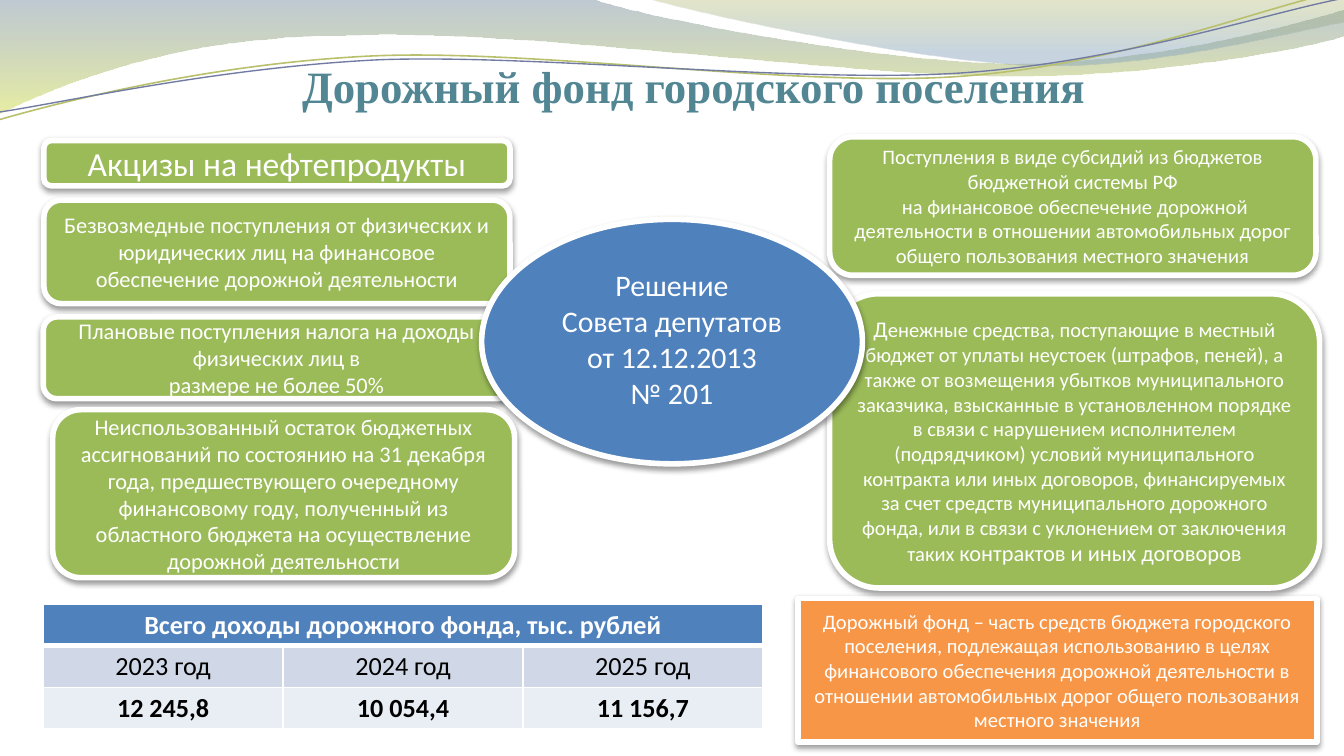
"""Builds the slide about the income sources of the town road fund."""
from math import cos, radians, sin

from lxml import etree
from pptx import Presentation
from pptx.dml.color import RGBColor
from pptx.enum.shapes import MSO_SHAPE
from pptx.enum.text import MSO_ANCHOR, PP_ALIGN
from pptx.oxml import parse_xml
from pptx.oxml.ns import nsdecls, qn
from pptx.util import Pt

CENTER, MIDDLE = PP_ALIGN.CENTER, MSO_ANCHOR.MIDDLE
RECTANGLE, ROUNDED, OVAL = MSO_SHAPE.RECTANGLE, MSO_SHAPE.ROUNDED_RECTANGLE, MSO_SHAPE.OVAL
WHITE = RGBColor(0xFF, 0xFF, 0xFF)
BLACK = RGBColor(0, 0, 0)
TEAL = RGBColor(0x52, 0x86, 0x93)
GREEN = RGBColor(0x9B, 0xBB, 0x59)
BLUE = RGBColor(0x4F, 0x81, 0xBD)
ORANGE = RGBColor(0xF7, 0x96, 0x46)
BLUE_TINT = RGBColor(0xD0, 0xD8, 0xE8)
PALE_TINT = RGBColor(0xE9, 0xED, 0xF4)
SLATE = RGBColor(0x72, 0x88, 0x9B)
LIME = RGBColor(0xD3, 0xDE, 0x57)
OLIVE = RGBColor(0xA4, 0xAC, 0x50)
SKY = RGBColor(0x84, 0xA3, 0xBD)
OLIVE_LINE = RGBColor(0xB9, 0xC0, 0x6C)
VIOLET_LINE = RGBColor(0x72, 0x7C, 0xA3)


def write(frame, paragraphs, sizes, color=WHITE, font="Calibri", bold=False):
    frame.word_wrap = True
    for index, pieces in enumerate(paragraphs):
        para = frame.paragraphs[0] if index == 0 else frame.add_paragraph()
        para.alignment = CENTER
        for piece, size in zip(pieces, sizes):
            for number, line in enumerate(piece.split("\n")):
                if number:
                    para.add_line_break()
                span = para.add_run()
                span.text = line
                span.font.size = Pt(size)
                span.font.name = font
                span.font.bold = bold
                span.font.color.rgb = color


def draw_curve(shapes, segments, close, tilt=0):
    turn = radians(tilt)
    steps = [[(Pt(360 + (x - 360) * cos(turn) - (y - 31) * sin(turn)),
               Pt(31 + (x - 360) * sin(turn) + (y - 31) * cos(turn)))
              for x, y in zip(segment[::2], segment[1::2])] for segment in segments]
    builder = shapes.build_freeform(*steps[0][0])
    builder.add_line_segments([step[-1] for step in steps[1:]], close=close)
    curve = builder.convert_to_shape()
    for node, step in zip(list(curve.element.spPr.iter(qn("a:lnTo"))), steps[1:]):
        if len(step) == 3:
            bend = etree.Element(qn("a:cubicBezTo"))
            for x, y in step:
                etree.SubElement(bend, qn("a:pt"), x=str(x - curve.left), y=str(y - curve.top))
            node.getparent().replace(node, bend)
    curve.rotation = -tilt
    curve.shadow.inherit = False
    return curve


deck = Presentation()
deck.slide_width, deck.slide_height = Pt(720), Pt(405)
page = deck.slides.add_slide(deck.slide_layouts[5])

waves = [
    ([(0, 0), (317, -1), (343, 9, 478, 34, 546, 34), (614, 34, 690, 14, 720, 5), (721, 19),
      (708, 24, 626, 41, 537, 41), (448, 40, 275, 15, 185, 19), (93, 19, 33, 45, -1, 61), (0, 0)],
     [(0, SLATE, 45), (1, LIME, 55)]),
    ([(345, -1), (366, 6, 491, 33, 554, 35), (616, 37, 692, 17, 720, 12), (720, 0), (345, -1)],
     [(0, OLIVE, 30), (0.8, SKY, 45)]),
]
for segments, stops in waves:
    wave = draw_curve(page.shapes, segments, True)
    wave.line.fill.background()
    wave.fill.gradient()
    wave.fill.gradient_angle = 270
    for stop, (position, color, opacity) in zip(wave.fill.gradient_stops, stops):
        stop.position = position
        stop.color.rgb = color
    for tint, (_, _, opacity) in zip(wave.element.spPr.iter(qn("a:srgbClr")), stops):
        etree.SubElement(tint, qn("a:alpha"), val=str(opacity * 1000))

ribbons = [
    ([(0, 64), (35, 54, 114, 34, 199, 30), (285, 26, 426, 47, 513, 41), (600, 35, 676, 4, 719, -5)],
     OLIVE_LINE, 0.85),
    ([(0, 60), (34, 55, 118, 36, 204, 32), (290, 29, 430, 45, 516, 39), (602, 33, 678, 7, 720, -1)],
     VIOLET_LINE, 0.75),
]
for segments, color, width in ribbons:
    ribbon = draw_curve(page.shapes, segments, False, tilt=2.7)
    ribbon.fill.background()
    ribbon.line.color.rgb = color
    ribbon.line.width = Pt(width)

title = page.shapes.title
title.element.getparent().append(title.element)
title.left, title.top, title.width, title.height = Pt(42.5), Pt(28), Pt(658), Pt(36)
title.text_frame.vertical_anchor = MIDDLE
write(title.text_frame, [["Дорожный фонд городского поселения"]], [24], TEAL, "Times New Roman", True)

boxes = [
    (RECTANGLE, 427.4, 320.6, 278, 77, ORANGE, [11], [[
        "Дорожный фонд – часть средств бюджета городского поселения, подлежащая использованию в целях "
        "финансового обеспечения дорожной деятельности в отношении автомобильных дорог общего "
        "пользования местного значения"]]),
    (ROUNDED, 23.5, 75.3, 249.7, 24.3, GREEN, [18], [["Акцизы на нефтепродукты"]]),
    (ROUNDED, 23.5, 107.2, 249.7, 55.5, GREEN, [12], [[
        "Безвозмедные поступления от физических и юридических лиц на финансовое обеспечение "
        "дорожной деятельности"]]),
    (ROUNDED, 23.2, 169.8, 250, 43.8, GREEN, [12], [[
        "Плановые поступления налога на доходы физических лиц в\nразмере не более 50%"]]),
    (ROUNDED, 28.2, 219.5, 247.5, 90, GREEN, [12], [[
        "Неиспользованный остаток бюджетных ассигнований по состоянию на 31 декабря года, "
        "предшествующего очередному финансовому году, полученный из областного бюджета на "
        "осуществление дорожной деятельности"]]),
    (ROUNDED, 444.5, 73.3, 260.5, 74.2, GREEN, [11], [
        ["Поступления в виде субсидий из бюджетов бюджетной системы РФ"],
        [" на финансовое обеспечение дорожной деятельности в отношении автомобильных дорог общего "
         "пользования местного значения"]]),
    (ROUNDED, 444.5, 157.4, 262.5, 157.6, GREEN, [12, 11, 12], [[
        "Д",
        "енежные средства, поступающие в местный бюджет от уплаты неустоек (штрафов, пеней), а также "
        "от возмещения убытков муниципального заказчика, взысканные в установленном порядке в связи с "
        "нарушением исполнителем (подрядчиком) условий муниципального контракта или иных договоров, "
        "финансируемых за счет средств муниципального дорожного фонда, или в связи с уклонением от "
        "заключения таких ",
        "контрактов и иных договоров"]]),
    (OVAL, 258, 117.5, 204, 131, BLUE, [16], [
        ["Решение\nСовета депутатов\nот 12.12.2013"], ["№ 201"]]),
]
for kind, left, top, width, height, color, sizes, paragraphs in boxes:
    box = page.shapes.add_shape(kind, Pt(left), Pt(top), Pt(width), Pt(height))
    box.fill.solid()
    box.fill.fore_color.rgb = color
    box.line.color.rgb = WHITE
    box.line.width = Pt(3)
    box.shadow.inherit = False
    box.element.spPr.find(qn("a:effectLst")).append(parse_xml(
        f'<a:outerShdw {nsdecls("a")} blurRad="{Pt(3.1)}" dist="{Pt(1.6)}" dir="5400000" rotWithShape="0">'
        '<a:srgbClr val="000000"><a:alpha val="38000"/></a:srgbClr></a:outerShdw>'))
    box.text_frame.vertical_anchor = MIDDLE
    if kind == OVAL:
        box.text_frame.margin_bottom = Pt(6.8)
    write(box.text_frame, paragraphs, sizes)

rows = [
    (["Всего доходы дорожного фонда, тыс. рублей"], BLUE, WHITE, True, 1, 3),
    (["2023 год", "2024 год", "2025 год"], BLUE_TINT, BLACK, False, 3, 1),
    (["12 245,8", "10 054,4", "11 156,7"], PALE_TINT, BLACK, True, 1, 1),
]
table = page.shapes.add_table(3, 3, Pt(23.2), Pt(323.8), Pt(385.5), Pt(66.6)).table
table.cell(0, 0).merge(table.cell(0, 2))
for row, (texts, fill, color, bold, above, below) in enumerate(rows):
    for column in range(3):
        cell = table.cell(row, column)
        cell.margin_top = cell.margin_bottom = Pt(2.6)
        properties = cell._tc.get_or_add_tcPr()
        for side, width in (("L", 1), ("R", 1), ("T", above), ("B", below)):
            properties.append(parse_xml(
                f'<a:ln{side} {nsdecls("a")} w="{Pt(width)}"><a:solidFill>'
                f'<a:srgbClr val="{WHITE}"/></a:solidFill></a:ln{side}>'))
        cell.fill.solid()
        cell.fill.fore_color.rgb = fill
        if column < len(texts):
            write(cell.text_frame, [[texts[column]]], [14], color, bold=bold)

deck.save("out.pptx")
